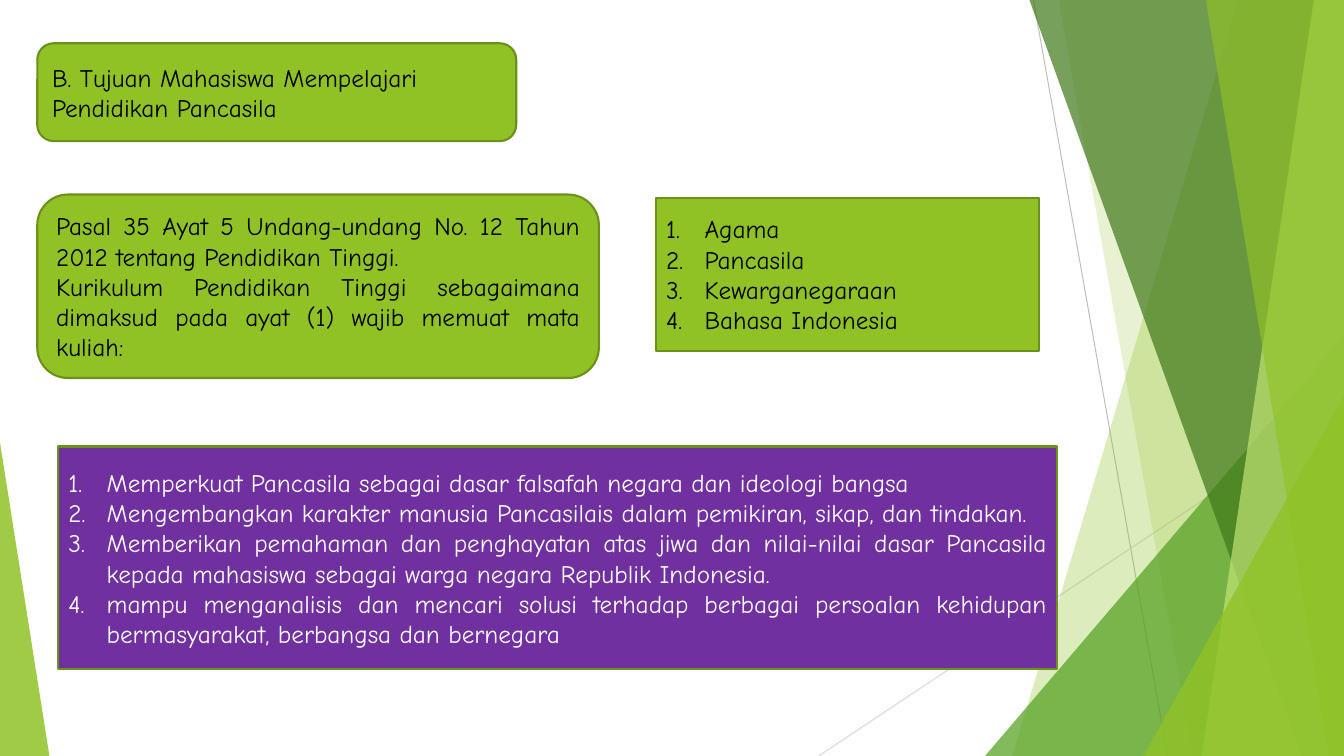
from lxml.etree import SubElement
from pptx import Presentation
from pptx.dml.color import RGBColor
from pptx.enum.shapes import MSO_CONNECTOR, MSO_SHAPE
from pptx.enum.text import MSO_ANCHOR, PP_ALIGN
from pptx.oxml.ns import qn
from pptx.util import Inches, Pt

WIDTH, HEIGHT = 13.33, 7.5
FONT = "Comic Neue"
COLORS = {
    "lime": "90C226", "green": "54A021", "forest": "3F7819", "pale": "C0E474",
    "border": "6B901C", "purple": "7030A0", "black": "000000", "white": "FFFFFF",
    "gray": "BFBFBF", "light_gray": "D9D9D9",
}

TITLE = ["B. Tujuan Mahasiswa Mempelajari Pendidikan Pancasila"]
LAW = [
    "Pasal 35 Ayat 5 Undang-undang No. 12 Tahun 2012 tentang Pendidikan Tinggi.",
    "Kurikulum Pendidikan Tinggi sebagaimana dimaksud pada ayat (1) wajib memuat mata kuliah:",
]
COURSES = ["Agama", "Pancasila", "Kewarganegaraan", "Bahasa Indonesia"]
GOALS = [
    "Memperkuat Pancasila sebagai dasar falsafah negara dan ideologi bangsa",
    "Mengembangkan karakter manusia Pancasilais dalam pemikiran, sikap, dan tindakan.",
    "Memberikan pemahaman dan penghayatan atas jiwa dan nilai-nilai dasar Pancasila "
    "kepada mahasiswa sebagai warga negara Republik Indonesia.",
    "mampu menganalisis dan mencari solusi terhadap berbagai persoalan kehidupan "
    "bermasyarakat, berbangsa dan bernegara",
]


def color(name):
    return RGBColor.from_string(COLORS[name])


def paint_facet(shape, fill, opacity):
    """Fill a borderless shape with a see-through color."""
    shape.shadow.inherit = False
    shape.fill.solid()
    shape.fill.fore_color.rgb = color(fill)
    shape.line.fill.background()
    fill_color = shape._element.spPr.find(qn("a:solidFill")).find(qn("a:srgbClr"))
    SubElement(fill_color, qn("a:alpha")).set("val", str(opacity * 1000))


def add_ray(slide, start, end, line_color):
    ray = slide.shapes.add_connector(
        MSO_CONNECTOR.STRAIGHT, *map(Inches, start + end))
    ray.line.color.rgb = color(line_color)
    ray.line.width = Pt(0.75)
    SubElement(ray._element.spPr, qn("a:effectLst"))


def add_band(slide, top_x, bottom_x, fill, opacity):
    """A slanted band from the top edge to the bottom, filled to the right edge."""
    corners = [(top_x, 0), (WIDTH, 0), (WIDTH, HEIGHT), (bottom_x, HEIGHT)]
    points = [(Inches(x), Inches(y)) for x, y in corners]
    builder = slide.shapes.build_freeform(*points[0])
    builder.add_line_segments(points[1:], close=True)
    paint_facet(builder.convert_to_shape(), fill, opacity)


def add_corner(slide, box, apex, fill, opacity):
    """A right triangle in a bottom corner; apex 0 is left, 1 is right."""
    corner = slide.shapes.add_shape(
        MSO_SHAPE.ISOSCELES_TRIANGLE, *map(Inches, box))
    corner.adjustments[0] = apex
    paint_facet(corner, fill, opacity)


def add_backdrop(slide):
    add_ray(slide, (10.25, 0), (11.58, HEIGHT), "gray")
    add_ray(slide, (WIDTH, 4.03), (8.12, HEIGHT), "light_gray")
    add_band(slide, 12.28, 10.04, "lime", 30)
    add_band(slide, 10.5, 11.83, "lime", 20)
    add_corner(slide, (9.77, 3.33, 3.56, 4.17), 1, "green", 72)
    add_band(slide, 10.21, 12.91, "forest", 70)
    add_band(slide, 13.03, 11.92, "pale", 70)
    add_band(slide, 11.96, 13.18, "lime", 65)
    add_corner(slide, (11.34, 3.93, 1.99, 3.57), 1, "lime", 80)
    add_corner(slide, (0, 4.39, 0.49, 3.11), 0, "lime", 85)


def number_paragraph(paragraph):
    """Give a paragraph an automatic number with a hanging indent."""
    properties = paragraph._p.get_or_add_pPr()
    indent = Inches(0.38)
    properties.set("marL", str(indent))
    properties.set("indent", str(-indent))
    SubElement(properties, qn("a:buFont")).set("typeface", "+mj-lt")
    SubElement(properties, qn("a:buAutoNum")).set("type", "arabicPeriod")


def add_panel(slide, box, lines, preset=MSO_SHAPE.RECTANGLE, fill="lime",
              text_color="black", alignment=PP_ALIGN.JUSTIFY, numbered=False):
    panel = slide.shapes.add_shape(preset, *map(Inches, box))
    panel.shadow.inherit = False
    panel.fill.solid()
    panel.fill.fore_color.rgb = color(fill)
    panel.line.color.rgb = color("border")
    panel.line.width = Pt(1.5)
    text_frame = panel.text_frame
    text_frame.word_wrap = True
    text_frame.vertical_anchor = MSO_ANCHOR.MIDDLE
    text_frame.text = "\n".join(lines)
    for paragraph in text_frame.paragraphs:
        paragraph.alignment = alignment
        if numbered:
            number_paragraph(paragraph)
        for run in paragraph.runs:
            run.font.name = FONT
            run.font.size = Pt(18)
            run.font.color.rgb = color(text_color)


def main():
    presentation = Presentation()
    presentation.slide_width = Inches(WIDTH)
    presentation.slide_height = Inches(HEIGHT)
    slide = presentation.slides.add_slide(presentation.slide_layouts[6])

    add_backdrop(slide)
    # Heading
    add_panel(slide, (0.37, 0.43, 4.75, 0.97), TITLE,
              MSO_SHAPE.ROUNDED_RECTANGLE, alignment=PP_ALIGN.LEFT)
    # Law and the courses it requires
    add_panel(slide, (0.37, 1.93, 5.57, 1.82), LAW, MSO_SHAPE.ROUNDED_RECTANGLE)
    add_panel(slide, (6.51, 1.96, 3.8, 1.52), COURSES, numbered=True)
    # Learning goals
    add_panel(slide, (0.58, 4.43, 9.9, 2.21), GOALS, fill="purple",
              text_color="white", numbered=True)

    presentation.save("out.pptx")


if __name__ == "__main__":
    main()
